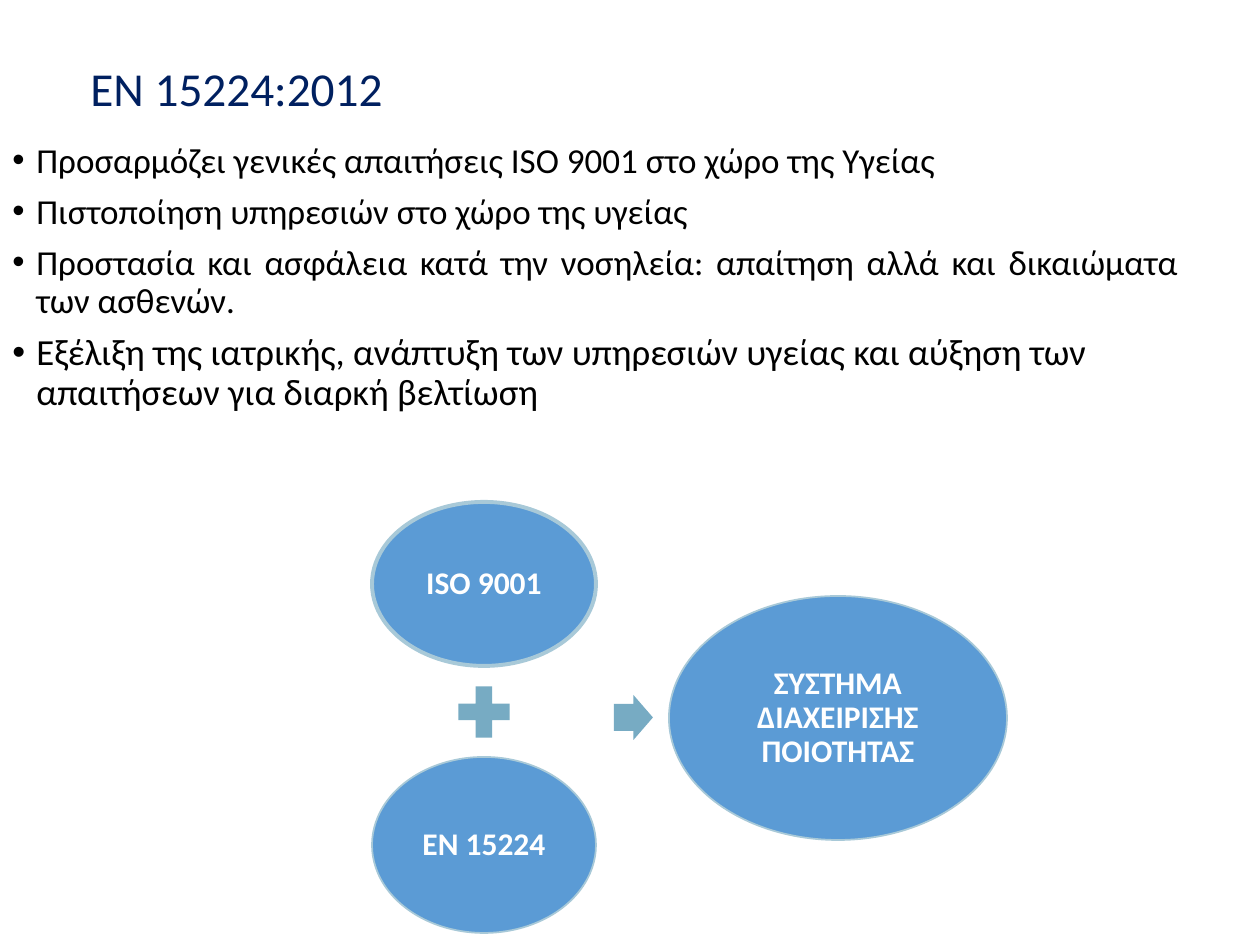
import pptx
import pptx.dml.color
import pptx.enum.shapes
import pptx.enum.text
import pptx.util
from dataclasses import dataclass
from lxml import etree

PX = 914400 // 126  # EMU per pixel
SHAPE = pptx.enum.shapes.MSO_SHAPE
ALIGN = pptx.enum.text.PP_ALIGN
ANCHOR = pptx.enum.text.MSO_ANCHOR


@dataclass(frozen=True)
class Theme:
    font: str = "Calibri"
    title: str = "002060"
    body: str = "000000"
    label: str = "FFFFFF"
    circle: str = "5B9BD5"
    outline: str = "A8C9D8"
    operator: str = "77ABC3"
    title_size: int = 27
    body_size: int = 20
    closing_size: int = 21
    label_size: int = 18


THEME = Theme()

REQUIREMENTS = [
    ("Προσαρμόζει γενικές απαιτήσεις ISO 9001 στο χώρο της Υγείας", ALIGN.JUSTIFY, THEME.body_size),
    ("Πιστοποίηση υπηρεσιών στο χώρο της υγείας", ALIGN.JUSTIFY, THEME.body_size),
    ("Προστασία και ασφάλεια κατά την νοσηλεία: απαίτηση αλλά και δικαιώματα των ασθενών.",
     ALIGN.JUSTIFY, THEME.body_size),
    ("Εξέλιξη της ιατρικής, ανάπτυξη των υπηρεσιών υγείας και αύξηση των απαιτήσεων για διαρκή βελτίωση",
     ALIGN.LEFT, THEME.closing_size),
]


def px(*lengths):
    return [length * PX for length in lengths]


def rgb(color):
    return pptx.dml.color.RGBColor.from_string(color)


def style(paragraph, size, color, align, bold=False):
    paragraph.alignment = align
    paragraph.line_spacing = 0.9
    paragraph.font.name = THEME.font
    paragraph.font.size = pptx.util.Pt(size)
    paragraph.font.bold = bold
    paragraph.font.color.rgb = rgb(color)


def add_bullet(paragraph, indent):
    properties = paragraph._p.get_or_add_pPr()
    properties.set("marL", str(indent * PX))
    properties.set("indent", str(-indent * PX))
    font = etree.SubElement(properties, pptx.oxml.ns.qn("a:buFont"), typeface="Arial")
    bullet = etree.Element(pptx.oxml.ns.qn("a:buChar"), char="•")
    font.addnext(bullet)
    # The text defaults must close the paragraph properties
    properties.append(properties.find(pptx.oxml.ns.qn("a:defRPr")))


def add_title(slide, text, box):
    frame = slide.shapes.add_textbox(*px(*box)).text_frame
    frame.word_wrap = True
    frame.vertical_anchor = ANCHOR.MIDDLE
    frame.text = text
    style(frame.paragraphs[0], THEME.title_size, THEME.title, ALIGN.JUSTIFY)


def add_bullets(slide, items, box):
    frame = slide.shapes.add_textbox(*px(*box)).text_frame
    frame.word_wrap = True
    for index, (text, align, size) in enumerate(items):
        paragraph = frame.add_paragraph() if index else frame.paragraphs[0]
        paragraph.text = text
        paragraph.space_before = pptx.util.Pt(7.5)
        style(paragraph, size, THEME.body, align)
        add_bullet(paragraph, 24)


def add_filled(slide, preset, box, fill):
    shape = slide.shapes.add_shape(preset, *px(*box))
    shape.shadow.inherit = False
    shape.fill.solid()
    shape.fill.fore_color.rgb = rgb(fill)
    shape.line.fill.background()
    return shape


def add_circle(slide, text, box, line_width=1):
    circle = add_filled(slide, SHAPE.OVAL, box, THEME.circle)
    circle.line.color.rgb = rgb(THEME.outline)
    circle.line.width = pptx.util.Pt(line_width)
    frame = circle.text_frame
    frame.word_wrap = True
    frame.vertical_anchor = ANCHOR.MIDDLE
    frame.margin_left = frame.margin_right = frame.margin_top = frame.margin_bottom = 4 * PX
    frame.text = text
    style(frame.paragraphs[0], THEME.label_size, THEME.label, ALIGN.CENTER, bold=True)


def main():
    presentation = pptx.Presentation()
    presentation.slide_width = pptx.util.Inches(10)
    presentation.slide_height = pptx.util.Inches(7.5)
    slide = presentation.slides.add_slide(presentation.slide_layouts[6])

    # Heading and requirements
    add_title(slide, "ΕΝ 15224:2012", (78, 0, 1086, 183))
    add_bullets(slide, REQUIREMENTS, (0, 137, 1191, 808))

    # The two standards add up to the management system
    add_circle(slide, "ISO 9001", (372, 502, 224, 164), line_width=2.25)
    add_filled(slide, SHAPE.MATH_PLUS, (449, 677, 70, 70), THEME.operator)
    add_circle(slide, "EN 15224", (372, 757, 224, 176))
    arrow = add_filled(slide, SHAPE.RIGHT_ARROW, (614, 695, 39, 45), THEME.operator)
    arrow.adjustments[0] = 0.6
    add_circle(slide, "ΣΥΣΤΗΜΑ ΔΙΑΧΕΙΡΙΣΗΣ ΠΟΙΟΤΗΤΑΣ", (669, 596, 338, 244))

    presentation.save("out.pptx")


if __name__ == "__main__":
    main()
